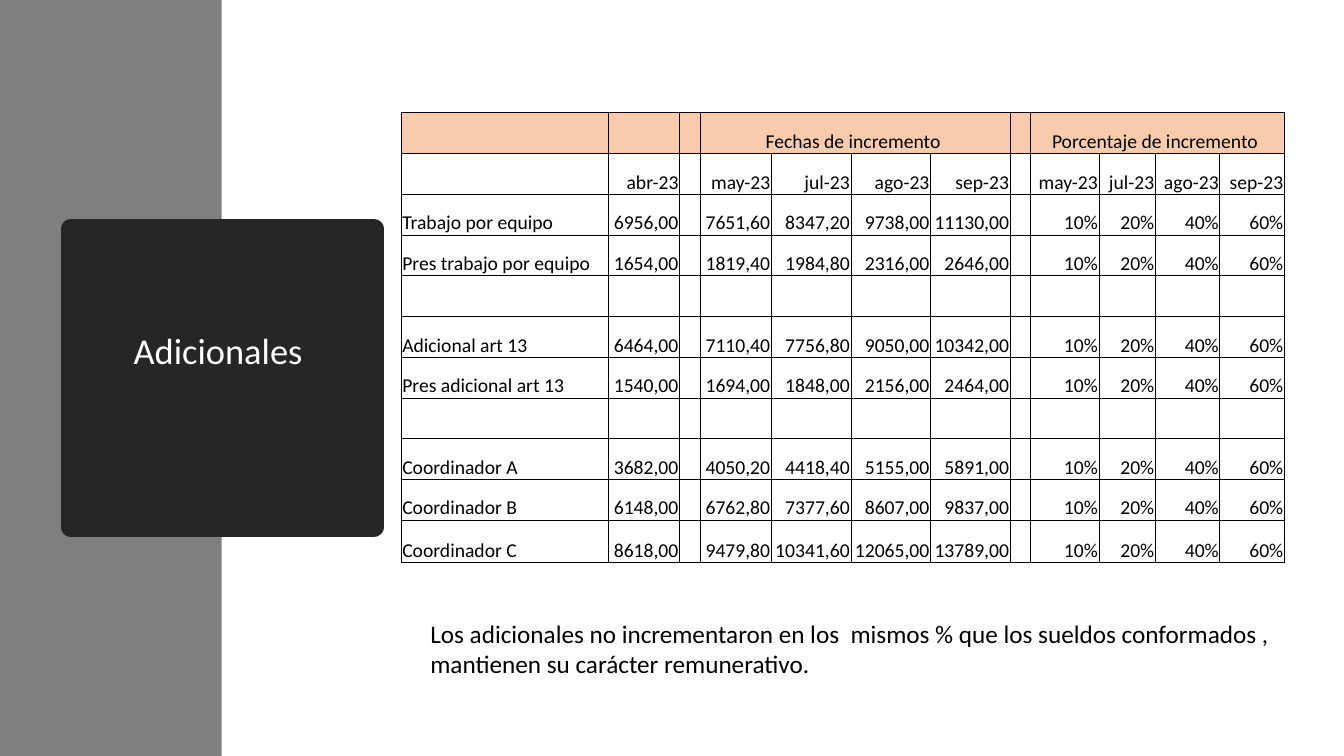
from dataclasses import dataclass

from lxml import etree
from pptx import Presentation
from pptx.dml.color import RGBColor
from pptx.enum.shapes import MSO_SHAPE
from pptx.enum.text import MSO_ANCHOR, MSO_AUTO_SIZE, PP_ALIGN
from pptx.oxml.ns import qn
from pptx.slide import Slide
from pptx.table import Table, _Cell
from pptx.util import Inches, Pt

RECTANGLE = MSO_SHAPE.RECTANGLE
LEFT, CENTER, RIGHT = PP_ALIGN.LEFT, PP_ALIGN.CENTER, PP_ALIGN.RIGHT
MIDDLE, BOTTOM = MSO_ANCHOR.MIDDLE, MSO_ANCHOR.BOTTOM
NO_AUTOFIT, GROW = MSO_AUTO_SIZE.NONE, MSO_AUTO_SIZE.SHAPE_TO_FIT_TEXT

BLACK = RGBColor(0x00, 0x00, 0x00)
WHITE = RGBColor(0xFF, 0xFF, 0xFF)
GRAY = RGBColor(0x7F, 0x7F, 0x7F)
CHARCOAL = RGBColor(0x26, 0x26, 0x26)
PEACH = RGBColor(0xF8, 0xCB, 0xAD)

FONT = "Calibri"
TITLE_ONLY_LAYOUT = 5
COLUMN_WIDTHS = (2.05, 0.71, 0.21, 0.7, 0.79, 0.79, 0.79, 0.2, 0.68, 0.56, 0.64, 0.64)
ROW_HEIGHT, LAST_ROW_HEIGHT = 0.404, 0.42
GROUP_SIZE = 4
AMOUNTS_COLUMN, PERCENTAGES_COLUMN = 3, 8
INCREASE_MONTHS = ("may-23", "jul-23", "ago-23", "sep-23")
PERCENTAGES = ("10%", "20%", "40%", "60%")
THIN, THICK = Pt(0.5), Pt(1)


@dataclass(frozen=True)
class Row:
    label: str = ""
    base: str = ""
    amounts: tuple[str, ...] = ("",) * GROUP_SIZE
    percentages: tuple[str, ...] = PERCENTAGES

    def texts(self) -> list[str]:
        return [self.label, self.base, "", *self.amounts, "", *self.percentages]


SPACER = Row(percentages=("",) * GROUP_SIZE)
ROWS = (
    Row("", "", ("Fechas de incremento ", "", "", ""), ("Porcentaje de incremento ", "", "", "")),
    Row("", "abr-23", INCREASE_MONTHS, INCREASE_MONTHS),
    Row("Trabajo por equipo", "6956,00", ("7651,60", "8347,20", "9738,00", "11130,00")),
    Row("Pres trabajo por equipo", "1654,00", ("1819,40", "1984,80", "2316,00", "2646,00")),
    SPACER,
    Row("Adicional art 13", "6464,00", ("7110,40", "7756,80", "9050,00", "10342,00")),
    Row("Pres adicional art 13", "1540,00", ("1694,00", "1848,00", "2156,00", "2464,00")),
    SPACER,
    Row("Coordinador A", "3682,00", ("4050,20", "4418,40", "5155,00", "5891,00")),
    Row("Coordinador B", "6148,00", ("6762,80", "7377,60", "8607,00", "9837,00")),
    Row("Coordinador C", "8618,00", ("9479,80", "10341,60", "12065,00", "13789,00")),
)


def set_attributes(target: object, values: dict[str, object]) -> None:
    for name, value in values.items():
        setattr(target, name, value)


def write_text(holder: object, text: str, size: float, color: RGBColor, alignment: PP_ALIGN) -> None:
    paragraph = holder.text_frame.paragraphs[0]
    paragraph.alignment = alignment
    if text:
        font = paragraph.add_run().font
        paragraph.runs[0].text = text
    else:
        font = paragraph.font
    set_attributes(font, {"name": FONT, "size": Pt(size)})
    font.color.rgb = color


def set_borders(cell: _Cell, widths: dict[str, int]) -> None:
    properties = cell._tc.get_or_add_tcPr()
    for position, (side, width) in enumerate(widths.items()):
        line = etree.Element(qn(f"a:ln{side}"), w=str(int(width)))
        fill = etree.SubElement(line, qn("a:solidFill"))
        etree.SubElement(fill, qn("a:srgbClr"), val=str(BLACK))
        properties.insert(position, line)


def format_cell(table: Table, row: int, column: int, text: str) -> None:
    cell = table.cell(row, column)
    set_attributes(cell, {
        "margin_left": Inches(0.01), "margin_right": Inches(0.01),
        "margin_top": Inches(0.01), "margin_bottom": 0, "vertical_anchor": BOTTOM,
    })
    alignment = CENTER if row == 0 else LEFT if column == 0 else RIGHT
    write_text(cell, text, 14, BLACK, alignment)
    if row == 0:
        cell.fill.solid()
        cell.fill.fore_color.rgb = PEACH
    else:
        cell.fill.background()
    set_borders(cell, {
        "L": THICK if column == 0 else THIN,
        "R": THICK if column == len(COLUMN_WIDTHS) - 1 else THIN,
        "T": THICK if row == 0 else THIN,
        "B": THICK if row == len(ROWS) - 1 else THIN,
    })


def add_side_band(slide: Slide) -> None:
    band = slide.shapes.add_shape(RECTANGLE, 0, 0, Inches(2.2), Inches(7.5))
    band.shadow.inherit = False
    band.fill.solid()
    band.fill.fore_color.rgb = GRAY
    band.line.fill.background()


def add_title_circle(slide: Slide) -> None:
    title = slide.shapes.title
    set_attributes(title, {
        "left": Inches(0.7), "top": Inches(2.27), "width": Inches(3.01), "height": Inches(2.96),
    })
    # Elliptical outline, placed in front of the band
    geometry = etree.Element(qn("a:prstGeom"), prst="ellipse")
    etree.SubElement(geometry, qn("a:avLst"))
    title._element.spPr.insert(1, geometry)
    slide.shapes._spTree.append(title._element)
    title.fill.solid()
    title.fill.fore_color.rgb = CHARCOAL
    title.line.color.rgb = CHARCOAL
    title.line.width = Pt(13.75)
    set_attributes(title.text_frame, {
        "vertical_anchor": MIDDLE, "auto_size": NO_AUTOFIT, "word_wrap": True,
        "margin_bottom": Inches(0.55),
    })
    write_text(title, "Adicionales ", 26, WHITE, CENTER)
    title.text_frame.paragraphs[0].line_spacing = 0.9


def add_note(slide: Slide) -> None:
    note = slide.shapes.add_textbox(Inches(4.17), Inches(6.08), Inches(8.57), Inches(0.71))
    set_attributes(note.text_frame, {"word_wrap": True, "auto_size": GROW})
    text = ("Los adicionales no incrementaron en los  mismos % que los sueldos "
            "conformados , mantienen su carácter remunerativo.")
    write_text(note, text, 18, BLACK, LEFT)


def add_increase_table(slide: Slide) -> None:
    table = slide.shapes.add_table(
        len(ROWS), len(COLUMN_WIDTHS), Inches(3.98), Inches(1.12), Inches(8.75), Inches(4.46)
    ).table
    set_attributes(table, {"first_row": False, "horz_banding": False})
    for column, width in zip(table.columns, COLUMN_WIDTHS):
        column.width = Inches(width)
    for row in table.rows:
        row.height = Inches(ROW_HEIGHT)
    table.rows[len(ROWS) - 1].height = Inches(LAST_ROW_HEIGHT)
    for row_index, row in enumerate(ROWS):
        for column_index, text in enumerate(row.texts()):
            format_cell(table, row_index, column_index, text)
    # Group headings span four months each
    for first in (AMOUNTS_COLUMN, PERCENTAGES_COLUMN):
        table.cell(0, first).merge(table.cell(0, first + GROUP_SIZE - 1))


def main() -> None:
    presentation = Presentation()
    presentation.slide_width = Inches(13.33)
    presentation.slide_height = Inches(7.5)
    slide = presentation.slides.add_slide(presentation.slide_layouts[TITLE_ONLY_LAYOUT])
    add_side_band(slide)
    add_title_circle(slide)
    add_note(slide)
    add_increase_table(slide)
    presentation.save("out.pptx")


if __name__ == "__main__":
    main()
